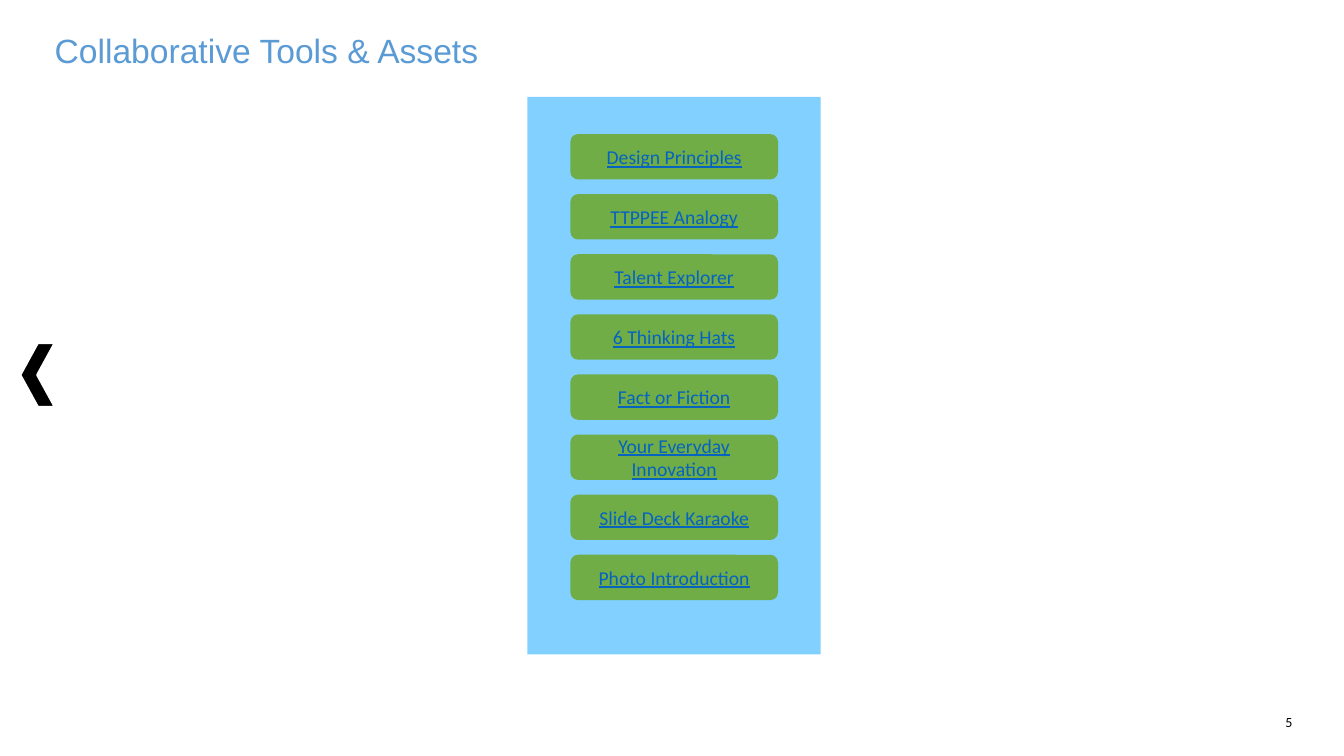
from dataclasses import dataclass
from typing import Any, Optional

from pptx import Presentation
from pptx import util as u
from pptx.dml.color import RGBColor
from pptx.enum import shapes, text

WIDE, HIGH = u.Inches(13.33), u.Inches(7.5)
KIND = shapes.MSO_SHAPE
ALIGN = text.PP_ALIGN


@dataclass(frozen=True)
class Theme:
    title: str = "5B9BD5"
    panel: str = "81D0FF"
    tool: str = "70AD47"
    link: str = "0563C1"
    dark: str = "000000"
    light: str = "FFFFFF"
    head: int = 24
    body: int = 14
    small: int = 10
    edge: int = 2


@dataclass(frozen=True)
class Box:
    """Shares of the slide, in percent."""
    left: float
    top: float
    width: float
    height: float

    def place(self) -> tuple[int, int, int, int]:
        return (int(WIDE * self.left / 100), int(HIGH * self.top / 100),
                int(WIDE * self.width / 100), int(HIGH * self.height / 100))


@dataclass(frozen=True)
class Style:
    font: str
    size: int
    color: str
    align: Any = ALIGN.LEFT
    under: bool = False


THEME = Theme()
HEAD = Style("Arial", THEME.head, THEME.title)
LINK = Style("Calibri", THEME.body, THEME.link, ALIGN.CENTER, True)
PAGE = Style("Calibri", THEME.small, THEME.dark, ALIGN.RIGHT)

TOOLS = ("Design Principles", "TTPPEE Analogy", "Talent Explorer",
         "6 Thinking Hats", "Fact or Fiction", "Your Everyday Innovation",
         "Slide Deck Karaoke", "Photo Introduction")
FIRST = Box(42.44, 17.73, 15.45, 6)
PITCH = 7.95


def assign(item: Any, values: dict[str, Any]) -> None:
    for name, value in values.items():
        setattr(item, name, value)


def write(frame: Any, words: str, style: Style) -> None:
    line = frame.paragraphs[0]
    line.alignment = style.align
    run = line.add_run()
    run.text = words
    assign(run.font, {"name": style.font, "size": u.Pt(style.size),
                      "underline": style.under})
    run.font.color.rgb = RGBColor.from_string(style.color)


def label(slide: Any, box: Box, words: str, style: Style) -> None:
    frame = slide.shapes.add_textbox(*box.place()).text_frame
    assign(frame, {"word_wrap": True, "margin_left": 0, "margin_right": 0,
                   "margin_top": 0, "margin_bottom": 0})
    write(frame, words, style)


def block(group: Any, kind: Any, box: Box, fill: str, edge: Optional[str] = None) -> Any:
    shape = group.shapes.add_shape(kind, *box.place())
    shape.shadow.inherit = False
    shape.fill.solid()
    shape.fill.fore_color.rgb = RGBColor.from_string(fill)
    if edge:
        shape.line.color.rgb = RGBColor.from_string(edge)
        shape.line.width = u.Pt(THEME.edge)
    else:
        shape.line.fill.background()
    return shape


def menu(slide: Any) -> None:
    group = slide.shapes.add_group_shape()
    block(group, KIND.RECTANGLE, Box(39.23, 12.83, 21.83, 73.75), THEME.panel)
    for row, name in enumerate(TOOLS):
        box = Box(FIRST.left, FIRST.top + row * PITCH, FIRST.width, FIRST.height)
        frame = block(group, KIND.ROUNDED_RECTANGLE, box, THEME.tool).text_frame
        assign(frame, {"word_wrap": True,
                       "vertical_anchor": text.MSO_ANCHOR.MIDDLE})
        write(frame, name, LINK)


def main() -> None:
    deck = Presentation()
    assign(deck, {"slide_width": WIDE, "slide_height": HIGH})
    slide = deck.slides.add_slide(deck.slide_layouts[6])
    label(slide, Box(93.62, 94.4, 2.55, 2.27), "5", PAGE)
    back = block(slide, KIND.CHEVRON, Box(1.48, 45.33, 2.63, 8.53),
                 THEME.dark, THEME.light)
    back.rotation = 180
    menu(slide)
    label(slide, Box(4.07, 3.93, 95.93, 7.87),
          "Collaborative Tools & Assets", HEAD)
    deck.save("out.pptx")


if __name__ == "__main__":
    main()
